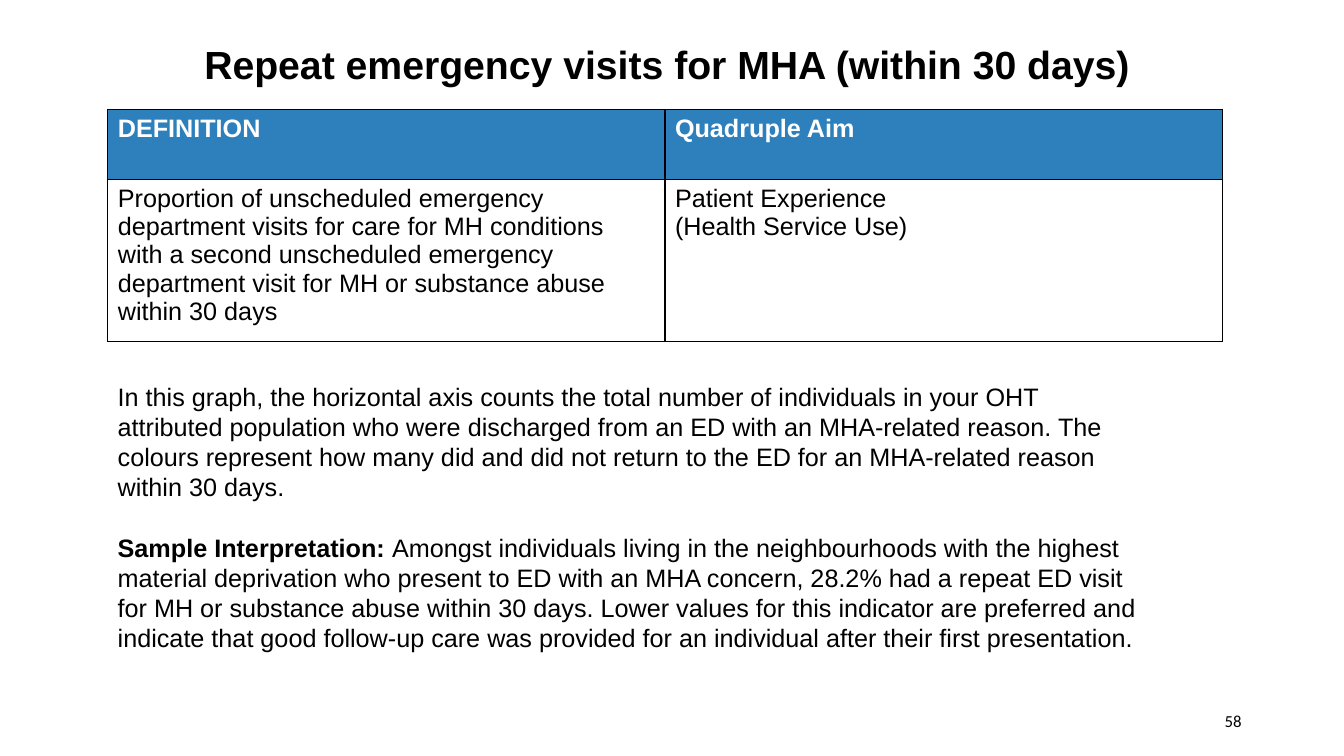
from lxml import etree
from pptx import Presentation
from pptx import util as u
from pptx.dml.color import RGBColor
from pptx.enum import text as t
from pptx.oxml import ns

Pt = u.Pt
COLOURS = {"ink": "000000", "header": "2E80BC", "header_text": "FFFFFF", "paper": "FFFFFF"}

TITLE = "Repeat emergency visits for MHA (within 30 days) "
HEADINGS = ["DEFINITION", "Quadruple Aim"]
DEFINITION = (
    "Proportion of unscheduled emergency department visits for care for MH conditions "
    "with a second unscheduled emergency department visit for MH or substance abuse within 30 days"
)
AIM = ["Patient Experience", "(Health Service Use)"]
GRAPH_NOTE = (
    "In this graph, the horizontal axis counts the total number of individuals in your "
    "OHT attributed population who were discharged from an ED with an MHA-related reason. "
    "The colours represent how many did and did not return to the ED for an MHA-related "
    "reason within 30 days. "
)
SAMPLE_LABEL = "Sample Interpretation: "
SAMPLE = (
    "Amongst individuals living in the neighbourhoods with the highest material deprivation "
    "who present to ED with an MHA concern, 28.2% had a repeat ED visit for MH or substance "
    "abuse within 30 days. Lower values for this indicator are preferred and indicate that "
    "good follow-up care was provided for an individual after their first presentation. "
)


def rgb(name):
    return RGBColor.from_string(COLOURS[name])


def write(paragraph, wording, size=18, font="Arial", colour="ink", bold=False,
          align=t.PP_ALIGN.LEFT, spacing=None):
    """Add one formatted run to a paragraph."""
    paragraph.alignment = align
    if spacing:
        paragraph.line_spacing = spacing
    run = paragraph.add_run()
    run.text = wording
    run.font.size = Pt(size)
    run.font.name = font
    run.font.bold = bold
    run.font.color.rgb = rgb(colour)


def add_frame(slide, left, top, width, height, anchor=t.MSO_ANCHOR.TOP):
    frame = slide.shapes.add_textbox(Pt(left), Pt(top), Pt(width), Pt(height)).text_frame
    frame.word_wrap = True
    frame.vertical_anchor = anchor
    return frame


def set_borders(cell):
    """Draw a 1 pt line on each side of a cell, ahead of its fill."""
    properties = cell._tc.get_or_add_tcPr()
    for position, side in enumerate(("lnL", "lnR", "lnT", "lnB")):
        line = etree.Element(ns.qn(f"a:{side}"), w=str(Pt(1)))
        solid = etree.SubElement(line, ns.qn("a:solidFill"))
        etree.SubElement(solid, ns.qn("a:srgbClr"), val=COLOURS["ink"])
        properties.insert(position, line)


def fill_cell(cell, lines, fill, **style):
    cell.fill.solid()
    cell.fill.fore_color.rgb = rgb(fill)
    set_borders(cell)
    for number, line in enumerate(lines):
        paragraph = cell.text_frame.add_paragraph() if number else cell.text_frame.paragraphs[0]
        write(paragraph, line, spacing=Pt(20.2), **style)


def add_definition_table(slide):
    table = slide.shapes.add_table(2, 2, Pt(77), Pt(78), Pt(796), Pt(166)).table
    for row, height in zip(table.rows, (50, 116)):
        row.height = Pt(height)
    for column, (heading, lines) in enumerate(zip(HEADINGS, ([DEFINITION], AIM))):
        table.columns[column].width = Pt(398)
        fill_cell(table.cell(0, column), [heading], "header", colour="header_text", bold=True)
        fill_cell(table.cell(1, column), lines, "paper")


def add_explanation(slide):
    frame = add_frame(slide, 77, 268.5, 743, 225)
    write(frame.paragraphs[0], GRAPH_NOTE, spacing=Pt(21.6))
    sample = frame.add_paragraph()
    sample.space_before = Pt(21.6)
    write(sample, SAMPLE_LABEL, bold=True, spacing=Pt(21.6))
    write(sample, SAMPLE)


def main():
    deck = Presentation()
    deck.slide_width, deck.slide_height = Pt(960), Pt(540)
    slide = deck.slides.add_slide(deck.slide_layouts[6])

    # Title
    title = add_frame(slide, 55.5, 17.5, 849.5, 60.5, t.MSO_ANCHOR.MIDDLE)
    write(title.paragraphs[0], TITLE, size=28, bold=True, align=t.PP_ALIGN.CENTER, spacing=0.9)

    # Definition and its explanation
    add_definition_table(slide)
    add_explanation(slide)

    # Page number
    page = add_frame(slide, 678, 500.5, 216, 28.5, t.MSO_ANCHOR.MIDDLE)
    write(page.paragraphs[0], "58", size=12, font="Calibri", align=t.PP_ALIGN.RIGHT)

    deck.save("out.pptx")


if __name__ == "__main__":
    main()
